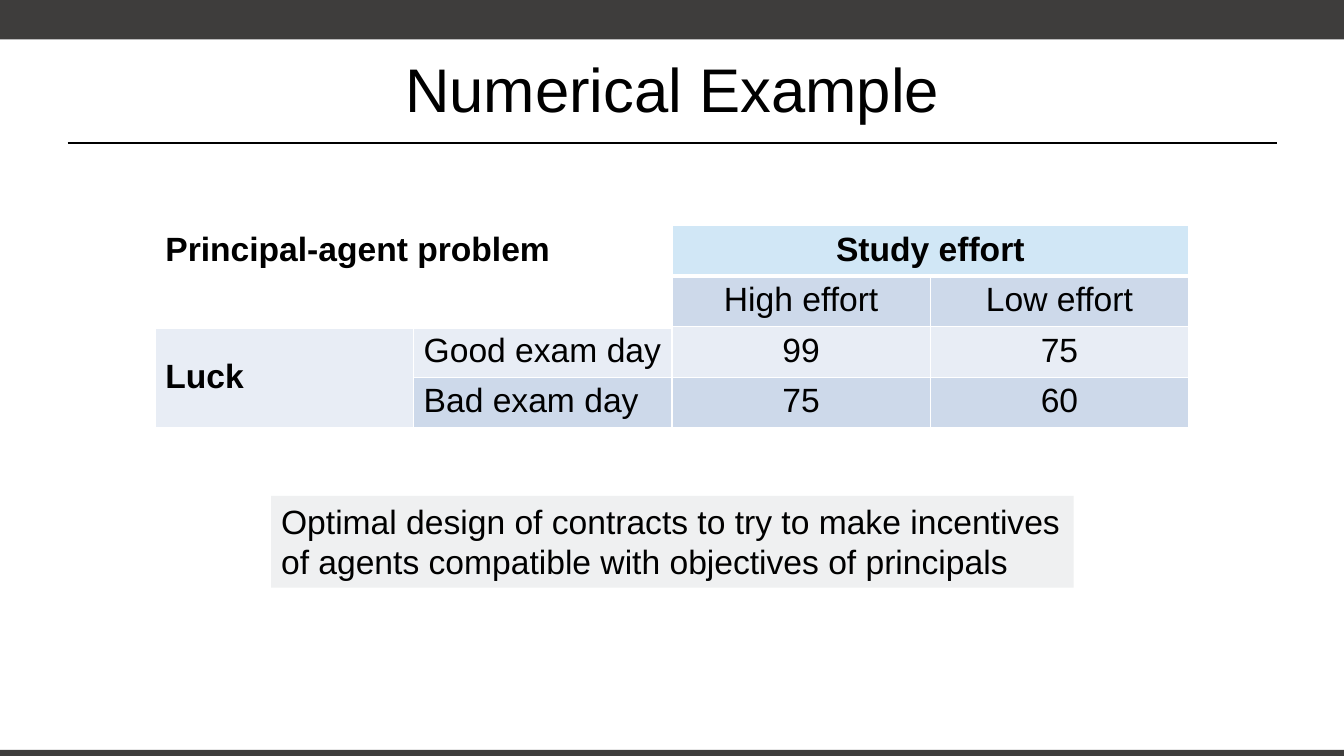
from lxml.etree import SubElement
from pptx import Presentation
from pptx.dml.color import RGBColor
from pptx.enum.shapes import MSO_CONNECTOR, MSO_SHAPE
from pptx.enum.text import MSO_ANCHOR, PP_ALIGN
from pptx.oxml.ns import qn
from pptx.util import Inches, Pt

BLACK = RGBColor(0x00, 0x00, 0x00)
CHARCOAL = RGBColor(0x3E, 0x3D, 0x3C)
GREY = RGBColor(0xEF, 0xF0, 0xF1)
SKY = RGBColor(0xD1, 0xE7, 0xF6)
BLUE = RGBColor(0xCD, 0xD9, 0xEA)
PALE = RGBColor(0xE8, 0xED, 0xF5)
WHITE = RGBColor(0xFF, 0xFF, 0xFF)


class SlideBuilder:
    font = "Arial"
    body_size = 24
    title_size = 44

    def __init__(self, slide):
        self.slide = slide
        self.shapes = slide.shapes

    def set_text(self, frame, text, size=body_size, bold=False, align=PP_ALIGN.LEFT):
        frame.text = text
        for paragraph in frame.paragraphs:
            paragraph.alignment = align
            for run in paragraph.runs:
                run.font.name = self.font
                run.font.size = Pt(size)
                run.font.bold = bold
                run.font.color.rgb = BLACK

    def band(self, top, height):
        band = self.shapes.add_shape(
            MSO_SHAPE.RECTANGLE, 0, Inches(top), Inches(13.33), Inches(height))
        band.shadow.inherit = False
        band.fill.solid()
        band.fill.fore_color.rgb = CHARCOAL
        band.line.fill.background()

    def rule(self, left, right, y):
        rule = self.shapes.add_connector(
            MSO_CONNECTOR.STRAIGHT, Inches(left), Inches(y), Inches(right), Inches(y))
        rule.line.color.rgb = BLACK
        rule.line.width = Pt(1.25)
        SubElement(rule._element.spPr, qn("a:effectLst"))

    def title(self, text, left, top, width, height):
        title = self.shapes.title
        title.left, title.top = Inches(left), Inches(top)
        title.width, title.height = Inches(width), Inches(height)
        self.set_text(title.text_frame, text, self.title_size, align=PP_ALIGN.CENTER)
        title.text_frame.vertical_anchor = MSO_ANCHOR.MIDDLE

    def note(self, text, left, top, width, height):
        note = self.shapes.add_textbox(
            Inches(left), Inches(top), Inches(width), Inches(height))
        note.fill.solid()
        note.fill.fore_color.rgb = GREY
        note.text_frame.word_wrap = True
        self.set_text(note.text_frame, text)

    def borders(self, cell, bottom):
        properties = cell._tc.get_or_add_tcPr()
        for side, points in (("L", 1), ("R", 1), ("T", 1), ("B", bottom)):
            edge = SubElement(properties, qn(f"a:ln{side}"), w=str(Pt(points)))
            fill = SubElement(edge, qn("a:solidFill"))
            SubElement(fill, qn("a:srgbClr"), val=str(WHITE))

    def table(self, rows, fills, merges, bold, left, top, width, row_height):
        columns = len(rows[0])
        table = self.shapes.add_table(
            len(rows), columns, Inches(left), Inches(top),
            Inches(width), Inches(row_height * len(rows))).table
        for row, (texts, row_fills) in enumerate(zip(rows, fills)):
            for column, (text, color) in enumerate(zip(texts, row_fills)):
                cell = table.cell(row, column)
                self.borders(cell, bottom=3 if row == 0 else 1)
                if color is None:
                    cell.fill.background()
                else:
                    cell.fill.solid()
                    cell.fill.fore_color.rgb = color
                align = PP_ALIGN.LEFT if column < 2 else PP_ALIGN.CENTER
                self.set_text(cell.text_frame, text, bold=text in bold, align=align)
                if text == "Luck":
                    cell.vertical_anchor = MSO_ANCHOR.MIDDLE
        for first, last in merges:
            table.cell(*first).merge(table.cell(*last))


def main():
    deck = Presentation()
    deck.slide_width, deck.slide_height = Inches(13.33), Inches(7.5)
    page = SlideBuilder(deck.slides.add_slide(deck.slide_layouts[5]))

    # Frame and title
    page.band(0, 0.39)
    page.band(7.44, 0.06)
    page.rule(0.67, 12.67, 1.42)
    page.title("Numerical Example", 0.67, 0.25, 12, 1.25)

    # Conclusion
    page.note("Optimal design of contracts to try to make incentives "
              "of agents compatible with objectives of principals",
              2.69, 4.92, 7.96, 0.91)

    # Exam scores by effort and luck
    page.table(
        rows=[["Principal-agent problem", "", "Study effort", ""],
              ["", "", "High effort", "Low effort"],
              ["Luck", "Good exam day", "99", "75"],
              ["", "Bad exam day", "75", "60"]],
        fills=[[None, None, SKY, SKY],
               [None, None, BLUE, BLUE],
               [PALE] * 4,
               [PALE, BLUE, BLUE, BLUE]],
        merges=[((0, 0), (1, 1)), ((0, 2), (0, 3)), ((2, 0), (3, 0))],
        bold={"Principal-agent problem", "Study effort", "Luck"},
        left=1.54, top=2.24, width=10.25, row_height=0.41)

    deck.save("out.pptx")


if __name__ == "__main__":
    main()
